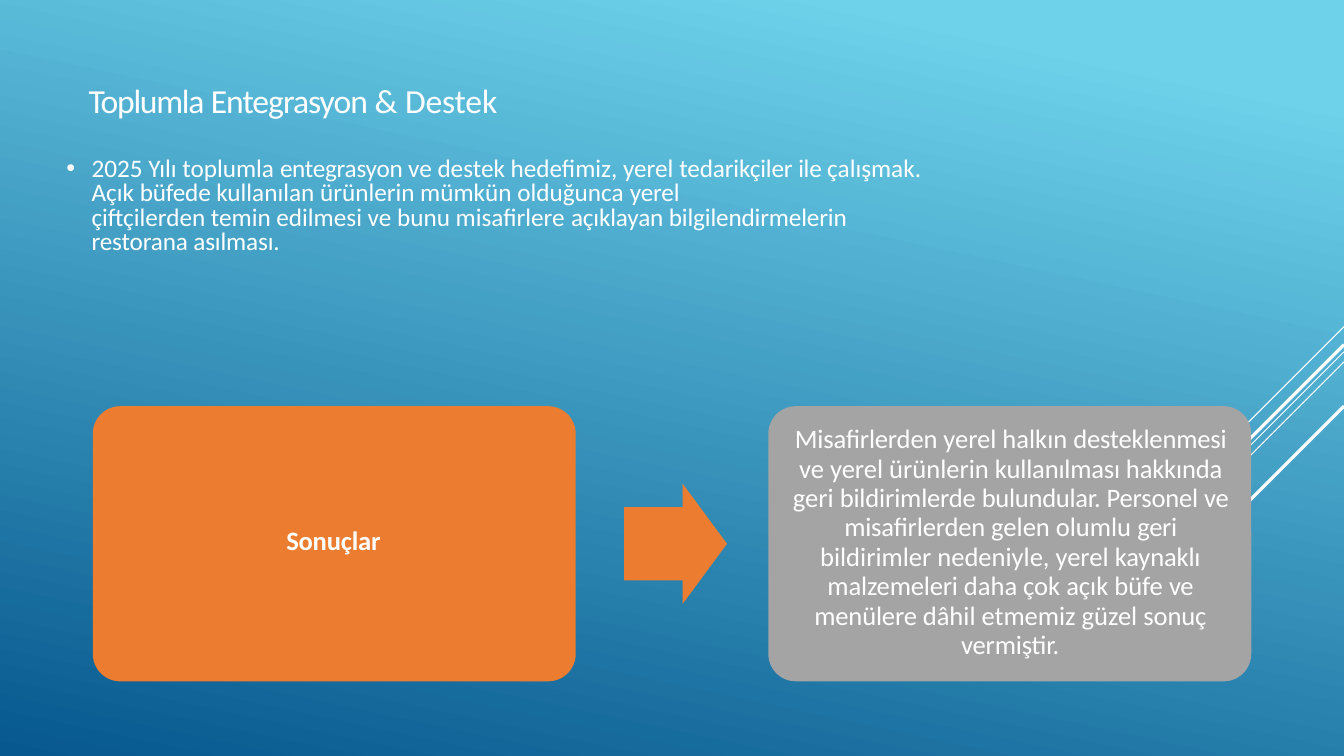
from dataclasses import dataclass, field

from lxml.etree import SubElement
from pptx import Presentation
from pptx.dml.color import RGBColor
from pptx.enum.shapes import MSO_CONNECTOR, MSO_SHAPE
from pptx.enum.text import MSO_AUTO_SIZE, PP_ALIGN
from pptx.oxml.ns import qn
from pptx.slide import Slide
from pptx.util import Inches, Pt

COLORS = {
    "sky": "6ED2EB",
    "deep": "06588E",
    "white": "FFFFFF",
    "orange": "EC7C30",
    "gray": "A4A4A4",
}
SLIDE_WIDTH, SLIDE_HEIGHT = 13.33, 7.5
DEFAULT_INSETS = (0.1, 0.05, 0.1, 0.05)


@dataclass
class Ray:
    top: float
    reach: float
    weight: float


@dataclass
class Panel:
    preset: MSO_SHAPE
    box: tuple[float, float, float, float]
    color: str
    adjustments: tuple[float, ...]


@dataclass
class Passage:
    runs: list[tuple[str, float]]
    spacing: float = 1.0
    before: float = 0
    left: float = 0
    right: float = 0
    hanging: float = 0
    bullet: str = ""
    align: PP_ALIGN = PP_ALIGN.LEFT


@dataclass
class Caption:
    box: tuple[float, float, float, float]
    size: float
    passages: list[Passage]
    insets: tuple[float, float, float, float] = DEFAULT_INSETS
    font: dict[str, bool] = field(default_factory=dict)


RAYS = [
    Ray(3.24, 1.0, 0.75),
    Ray(3.49, 3.26, 0.75),
    Ray(3.59, 2.07, 0.75),
    Ray(3.42, 1.91, 2.25),
    Ray(4.03, 1.39, 2.25),
]

TITLE = Caption((0.78, 0.74, 6.68, 0.5), 24, [
    Passage([("Toplumla ", -0.9), ("Entegrasyon ", -0.7), ("& ", 0), ("Destek", -0.1)]),
])

GOAL = Caption((0.55, 1.52, 8.69, 1.08), 18, [
    Passage([
        ("2025 Yılı toplumla ", 0), ("entegrasyon ", -0.2),
        ("ve destek hedefimiz, yerel ", 0), ("tedarikçiler ", -0.1),
        ("ile ", -0.2), ("çalışmak. Açık ", 0), ("büfede ", -0.1),
        ("kullanılan ürünlerin mümkün olduğunca ", 0), ("yerel", -0.1),
    ], spacing=0.8, before=7.2, left=0.26, hanging=-0.25, bullet="•"),
    Passage([
        ("çiftçilerden temin edilmesi ve bunu misafirlere ", 0),
        ("açıklayan bilgilendirmelerin restorana asılması.", -0.1),
    ], spacing=0.8, before=0.1, left=0.26),
])

ARROW = Panel(MSO_SHAPE.RIGHT_ARROW, (6.19, 4.8, 1.02, 1.19), "orange", (0.61, 0.43))
OUTCOME_PANEL = Panel(MSO_SHAPE.ROUNDED_RECTANGLE, (7.62, 4.03, 4.79, 2.73), "gray", (0.1,))
RESULTS_PANEL = Panel(MSO_SHAPE.ROUNDED_RECTANGLE, (0.92, 4.03, 4.79, 2.73), "orange", (0.1,))

OUTCOME = Caption((7.81, 4.18, 4.42, 2.38), 19, [
    Passage([
        ("Misafirlerden ", -0.1), ("yerel halkın ", 0), ("desteklenmesi ", -0.1),
        ("ve yerel ürünlerin ", 0), ("kullanılması hakkında ", -0.1),
        ("geri ", 0), ("bildirimlerde ", -0.1), ("bulundular. ", -0.2),
        ("Personel ", -0.1), ("ve ", -0.2), ("misafirlerden ", -0.1),
        ("gelen olumlu ", 0), ("geri", -0.2),
    ], spacing=0.92, before=2.9, left=0.01, align=PP_ALIGN.CENTER),
    Passage([
        ("bildirimler nedeniyle, yerel ", 0), ("kaynaklı malzemeleri ", -0.1),
        ("daha çok açık büfe ", 0), ("ve ", -0.3), ("menülere ", -0.1),
        ("dâhil etmemiz güzel ", 0), ("sonuç vermiştir.", -0.1),
    ], spacing=0.92, left=0.25, right=0.25, align=PP_ALIGN.CENTER),
], insets=(0, 0.04, 0, 0))

RESULTS = Caption((2.83, 5.19, 0.97, 0.34), 19, [
    Passage([("Sonuçlar", -0.1)], before=0.9, left=0.01),
], insets=(0, 0.01, 0, 0), font={"bold": True})


def rgb(name: str) -> RGBColor:
    return RGBColor.from_string(COLORS[name])


def apply(target: object, values: dict) -> None:
    for name, value in values.items():
        setattr(target, name, value)


def paint_background(slide: Slide) -> None:
    fill = slide.background.fill
    fill.gradient()
    fill.gradient_angle = 360 - 102
    for stop, position, color in zip(fill.gradient_stops, (0.1, 1.0), ("sky", "deep")):
        stop.position = position
        stop.color.rgb = rgb(color)


def draw_ray(slide: Slide, ray: Ray) -> None:
    line = slide.shapes.add_connector(
        MSO_CONNECTOR.STRAIGHT,
        Inches(SLIDE_WIDTH), Inches(ray.top),
        Inches(SLIDE_WIDTH - ray.reach), Inches(ray.top + ray.reach),
    )
    line.line.color.rgb = rgb("white")
    line.line.width = Pt(ray.weight)
    SubElement(line.element.spPr, qn("a:effectLst"))


def draw_panel(slide: Slide, panel: Panel) -> None:
    shape = slide.shapes.add_shape(panel.preset, *map(Inches, panel.box))
    shape.shadow.inherit = False
    shape.fill.solid()
    shape.fill.fore_color.rgb = rgb(panel.color)
    shape.line.fill.background()
    for index, value in enumerate(panel.adjustments):
        shape.adjustments[index] = value


def draw_caption(slide: Slide, caption: Caption) -> None:
    frame = slide.shapes.add_textbox(*map(Inches, caption.box)).text_frame
    sides = ("margin_left", "margin_top", "margin_right", "margin_bottom")
    apply(frame, {"word_wrap": True, "auto_size": MSO_AUTO_SIZE.SHAPE_TO_FIT_TEXT,
                  **dict(zip(sides, map(Inches, caption.insets)))})
    for index, passage in enumerate(caption.passages):
        paragraph = frame.add_paragraph() if index else frame.paragraphs[0]
        apply(paragraph, {"alignment": passage.align, "line_spacing": passage.spacing,
                          "space_before": Pt(passage.before)})
        properties = paragraph._p.get_or_add_pPr()
        indents = {"marL": passage.left, "marR": passage.right, "indent": passage.hanging}
        for name, value in indents.items():
            properties.set(name, str(Inches(value)))
        if passage.bullet:
            SubElement(properties, qn("a:buFont")).set("typeface", "Arial")
            SubElement(properties, qn("a:buChar")).set("char", passage.bullet)
        for words, tracking in passage.runs:
            run = paragraph.add_run()
            run.text = words
            apply(run.font, {"name": "Calibri", "size": Pt(caption.size), **caption.font})
            run.font.color.rgb = rgb("white")
            run._r.get_or_add_rPr().set("spc", str(round(tracking * 100)))


def main() -> None:
    deck = Presentation()
    apply(deck, {"slide_width": Inches(SLIDE_WIDTH), "slide_height": Inches(SLIDE_HEIGHT)})
    slide = deck.slides.add_slide(deck.slide_layouts[6])
    paint_background(slide)
    for ray in RAYS:
        draw_ray(slide, ray)
    for panel in (ARROW, OUTCOME_PANEL, RESULTS_PANEL):
        draw_panel(slide, panel)
    for caption in (TITLE, GOAL, OUTCOME, RESULTS):
        draw_caption(slide, caption)
    deck.save("out.pptx")


if __name__ == "__main__":
    main()
